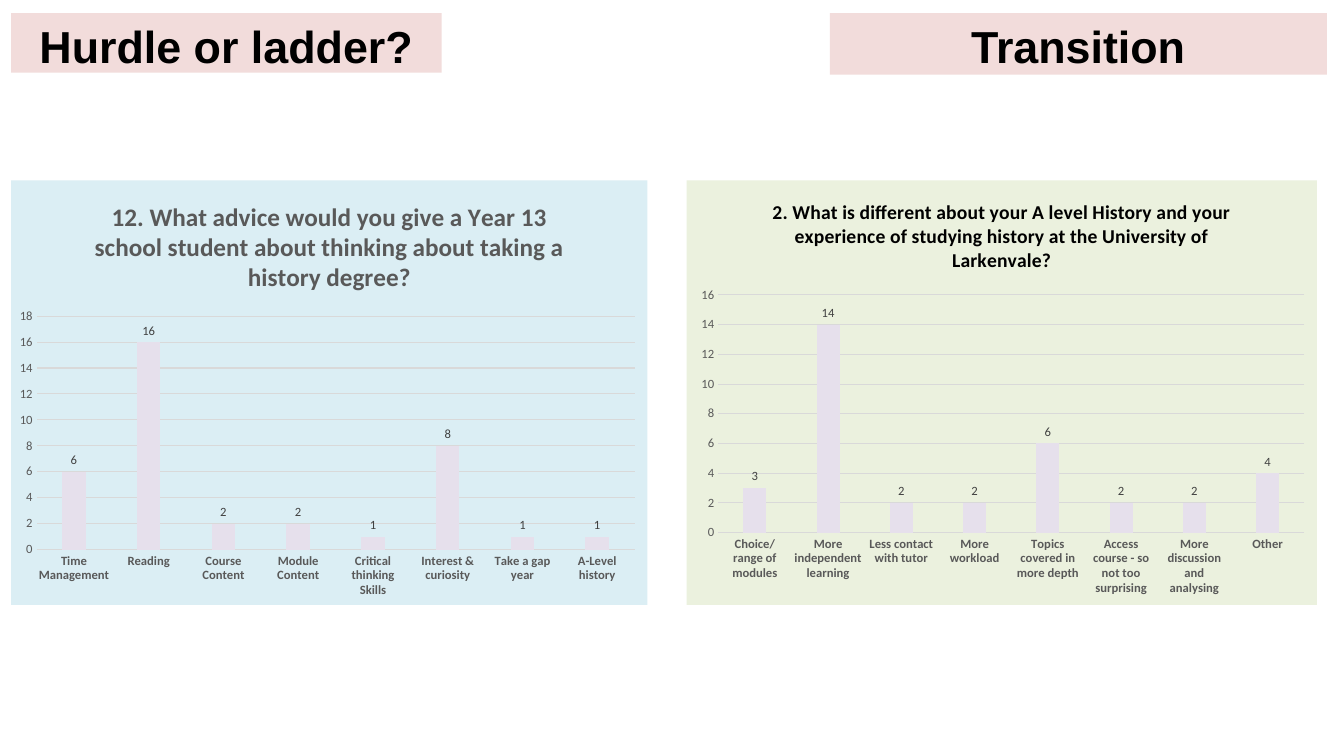
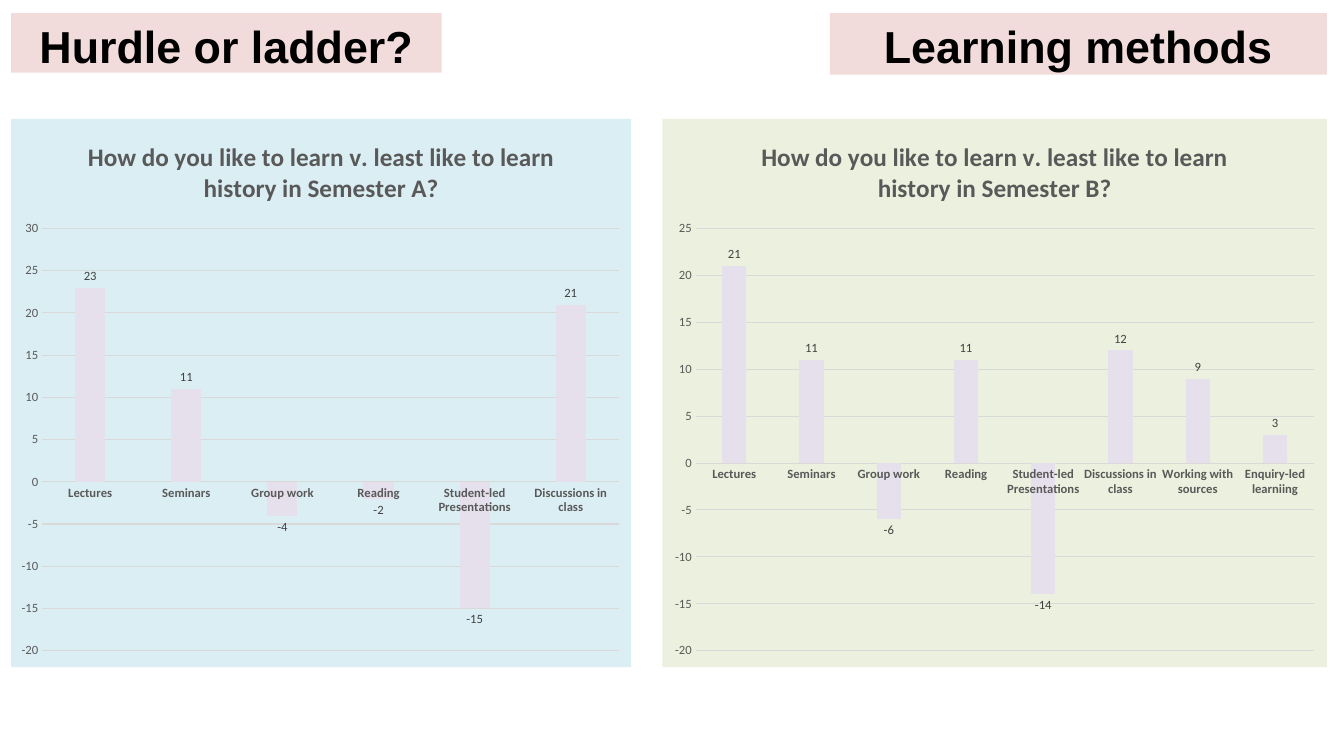
from dataclasses import dataclass

from lxml import etree
from pptx import Presentation
from pptx.chart.chart import Chart
from pptx.chart.data import CategoryChartData
from pptx.dml.color import RGBColor
from pptx.enum.chart import XL_CHART_TYPE as ChartType
from pptx.enum.chart import XL_LABEL_POSITION as LabelPosition
from pptx.enum.chart import XL_TICK_MARK as TickMark
from pptx.enum.shapes import MSO_SHAPE as ShapeKind
from pptx.enum.text import MSO_ANCHOR as Anchor
from pptx.enum.text import PP_ALIGN as Align
from pptx.oxml import parse_xml
from pptx.oxml.ns import nsdecls, qn
from pptx.slide import Slide
from pptx.text.text import Font
from pptx.util import Inches, Pt

SLIDE_WIDTH = Inches(13.33)
SLIDE_HEIGHT = Inches(7.5)
COLOURS = {
    "band": "F2DCDB",
    "blue panel": "DBEEF4",
    "green panel": "EBF1DE",
    "bar": "E6E0EC",
    "grid": "D9D9D9",
    "axis text": "595959",
    "label text": "404040",
    "black": "000000",
}
HEADING_FONT = "Arial"
CHART_FONT = "Calibri"
PLOT_RIGHT = 0.98


@dataclass(frozen=True)
class Area:
    """A rectangle in percent of the slide's width and height."""
    left: float
    top: float
    width: float
    height: float

    def lengths(self) -> tuple[int, int, int, int]:
        return (
            int(SLIDE_WIDTH * self.left / 100),
            int(SLIDE_HEIGHT * self.top / 100),
            int(SLIDE_WIDTH * self.width / 100),
            int(SLIDE_HEIGHT * self.height / 100),
        )


@dataclass(frozen=True)
class ColumnChart:
    """Plot top, height and left are shares of the chart's size."""
    title: str
    area: Area
    panel: str
    values: dict[str, int]
    axis_range: tuple[int, int, int]
    plot_top: float
    plot_height: float
    plot_left: float = 0.05
    title_size: int = 18
    title_colour: str = "axis text"


@dataclass(frozen=True)
class SurveySlide:
    topic: str
    charts: tuple[ColumnChart, ...]


TITLE_AREA = Area(0.83, 1.73, 32.03, 7.87)
TOPIC_AREA = Area(61.74, 1.73, 36.98, 8.13)

SURVEY_SLIDES = (
    SurveySlide("Transition", (
        ColumnChart(
            "12. What advice would you give a Year 13 school student about "
            "thinking about taking a history degree?",
            Area(0.83, 23.87, 47.34, 56.13), "blue panel",
            {"Time Management": 6, "Reading": 16, "Course Content": 2,
             "Module Content": 2, "Critical thinking Skills": 1,
             "Interest & curiosity": 8, "Take a gap year": 1,
             "A-Level history": 1},
            (0, 18, 2), 0.32, 0.55, plot_left=0.04,
        ),
        ColumnChart(
            "2. What is different about your A level History and your "
            "experience of studying history at the University of "
            "Larkenvale?",
            Area(51.09, 23.87, 46.89, 56.13), "green panel",
            {"Choice/range of modules": 3, "More independent learning": 14,
             "Less contact with tutor": 2, "More workload": 2,
             "Topics covered in more depth": 6,
             "Access course - so not too surprising": 2,
             "More discussion and analysing": 2, "Other": 4},
            (0, 16, 2), 0.27, 0.56, title_size=14, title_colour="black",
        ),
    )),
    SurveySlide("Learning methods", (
        ColumnChart(
            "How do you like to learn v. least like to learn history in "
            "Semester A?",
            Area(0.83, 15.73, 46.14, 72.53), "blue panel",
            {"Lectures": 23, "Seminars": 11, "Group work": -4, "Reading": -2,
             "Student-led Presentations": -15, "Discussions in class": 21},
            (-20, 30, 5), 0.2, 0.77,
        ),
        ColumnChart(
            "How do you like to learn v. least like to learn history in "
            "Semester B?",
            Area(49.29, 15.73, 49.44, 72.53), "green panel",
            {"Lectures": 21, "Seminars": 11, "Group work": -6, "Reading": 11,
             "Student-led Presentations": -14, "Discussions in class": 12,
             "Working with sources": 9, "Enquiry-led learniing": 3},
            (-20, 25, 5), 0.2, 0.77,
        ),
    )),
)


def colour(name: str) -> RGBColor:
    return RGBColor.from_string(COLOURS[name])


def style_font(font: Font, name: str, size: float, colour_name: str, bold: bool = False) -> None:
    font.name = name
    font.size = Pt(size)
    font.bold = bold
    font.color.rgb = colour(colour_name)


def add_heading(slide: Slide, text: str, area: Area) -> None:
    shape = slide.shapes.add_shape(ShapeKind.RECTANGLE, *area.lengths())
    shape.shadow.inherit = False
    shape.fill.solid()
    shape.fill.fore_color.rgb = colour("band")
    shape.line.fill.background()
    frame = shape.text_frame
    frame.word_wrap = True
    frame.vertical_anchor = Anchor.TOP
    frame.margin_left = frame.margin_right = Inches(0.11)
    frame.margin_top = frame.margin_bottom = Inches(0.06)
    paragraph = frame.paragraphs[0]
    paragraph.alignment = Align.CENTER
    paragraph.space_before = paragraph.space_after = Pt(0.9)
    run = paragraph.add_run()
    run.text = text
    style_font(run.font, HEADING_FONT, 32, "black", bold=True)


def fill_panel(chart: Chart, panel: str) -> None:
    """Give the whole chart area a plain fill without a border."""
    chart.element.find(qn("c:chart")).addnext(parse_xml(
        f'<c:spPr {nsdecls("c", "a")}><a:solidFill>'
        f'<a:srgbClr val="{COLOURS[panel]}"/></a:solidFill>'
        '<a:ln><a:noFill/></a:ln></c:spPr>'
    ))


def place_plot(chart: Chart, left: float, top: float, height: float) -> None:
    """Fix the inner plot area, in shares of the chart's size."""
    plot_area = chart.element.find(qn("c:chart")).find(qn("c:plotArea"))
    for automatic_layout in plot_area.findall(qn("c:layout")):
        plot_area.remove(automatic_layout)
    layout = etree.Element(qn("c:layout"))
    manual = etree.SubElement(layout, qn("c:manualLayout"))
    settings = {"layoutTarget": "inner", "xMode": "edge", "yMode": "edge",
                "x": left, "y": top, "w": round(PLOT_RIGHT - left, 2), "h": height}
    for tag, value in settings.items():
        etree.SubElement(manual, qn(f"c:{tag}")).set("val", str(value))
    plot_area.insert(0, layout)


def style_axes(chart: Chart, axis_range: tuple[int, int, int]) -> None:
    category_axis, value_axis = chart.category_axis, chart.value_axis
    for axis in (category_axis, value_axis):
        axis.major_tick_mark = axis.minor_tick_mark = TickMark.NONE
        style_font(axis.tick_labels.font, CHART_FONT, 9, "axis text", bold=axis is category_axis)
    value_axis.minimum_scale, value_axis.maximum_scale, value_axis.major_unit = axis_range
    value_axis.has_major_gridlines = True
    value_axis.format.line.fill.background()
    for line in (category_axis.format.line, value_axis.major_gridlines.format.line):
        line.color.rgb = colour("grid")
        line.width = Pt(0.75)


def style_columns(chart: Chart) -> None:
    plot = chart.plots[0]
    plot.gap_width = 219
    plot.overlap = -27
    plot.vary_by_categories = False
    series = plot.series[0]
    series.invert_if_negative = False
    series.format.fill.solid()
    series.format.fill.fore_color.rgb = colour("bar")
    labels = series.data_labels
    labels.show_value = True
    labels.position = LabelPosition.OUTSIDE_END
    style_font(labels.font, CHART_FONT, 9, "label text")


def add_column_chart(slide: Slide, column_chart: ColumnChart) -> None:
    data = CategoryChartData()
    data.categories = list(column_chart.values)
    data.add_series("Series 1", list(column_chart.values.values()))
    frame = slide.shapes.add_chart(
        ChartType.COLUMN_CLUSTERED, *column_chart.area.lengths(), data)
    chart = frame.chart
    chart.has_legend = False
    style_font(chart.font, CHART_FONT, 10, "black")
    chart.has_title = True
    chart.chart_title.include_in_layout = False
    run = chart.chart_title.text_frame.paragraphs[0].add_run()
    run.text = column_chart.title
    style_font(run.font, CHART_FONT, column_chart.title_size,
               column_chart.title_colour, bold=True)
    fill_panel(chart, column_chart.panel)
    place_plot(chart, column_chart.plot_left, column_chart.plot_top,
               column_chart.plot_height)
    style_axes(chart, column_chart.axis_range)
    style_columns(chart)


def main() -> None:
    presentation = Presentation()
    presentation.slide_width = SLIDE_WIDTH
    presentation.slide_height = SLIDE_HEIGHT
    blank_layout = presentation.slide_layouts[6]
    for survey_slide in SURVEY_SLIDES:
        slide = presentation.slides.add_slide(blank_layout)
        add_heading(slide, "Hurdle or ladder?", TITLE_AREA)
        add_heading(slide, survey_slide.topic, TOPIC_AREA)
        for column_chart in survey_slide.charts:
            add_column_chart(slide, column_chart)
    presentation.save("out.pptx")


if __name__ == "__main__":
    main()
